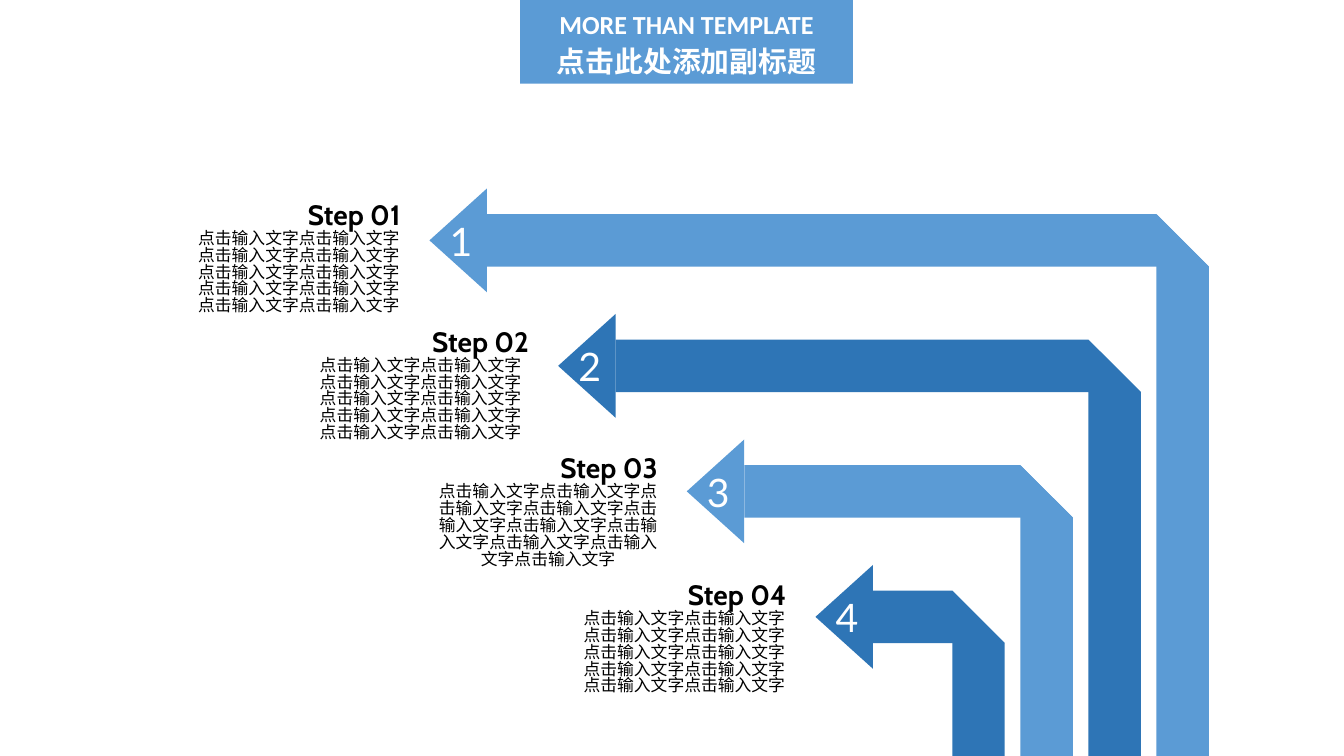
"""Build a slide with four bent arrows that lead to numbered steps."""
from dataclasses import dataclass

import lxml.etree
import pptx
import pptx.dml.color
import pptx.enum.shapes
import pptx.enum.text
import pptx.oxml.ns
import pptx.util

ALIGN = pptx.enum.text.PP_ALIGN
ANCHOR = pptx.enum.text.MSO_ANCHOR


@dataclass(frozen=True)
class Theme:
    """Colours, fonts and type sizes of the slide."""
    light: str = "5B9BD5"
    dark: str = "2E75B6"
    white: str = "FFFFFF"
    black: str = "000000"
    banner_font: str = "Calibri"
    number_font: str = "Lato"
    heading_font: str = "Cabin"
    chinese_font: str = "Noto Sans CJK SC"
    banner_size: float = 18.6
    subtitle_size: float = 20.6
    number_size: float = 28
    heading_size: float = 20
    body_size: float = 12


@dataclass(frozen=True)
class Box:
    """A rectangle in inches."""
    left: float
    top: float
    width: float
    height: float

    @property
    def right(self):
        """Return the right edge."""
        return self.left + self.width

    @property
    def bottom(self):
        """Return the bottom edge."""
        return self.top + self.height

    def lengths(self):
        """Return left, top, width and height as slide lengths."""
        return [pptx.util.Inches(value) for value in
                (self.left, self.top, self.width, self.height)]


THEME = Theme()
PAGE = Box(0, 0, 13.33, 7.5)
STEP_COUNT = 4
ARROW_LEFT, ARROW_TOP, ARROW_RIGHT = 4.26, 1.87, 11.99
COLUMN, ROW, INSET = 1.276, 1.245, 0.675
BAND, HEAD_WIDTH, HEAD_HEIGHT = 0.52, 0.57, 1.03
TEXT_GAP, TEXT_TOP, TEXT_ROW, TEXT_HEIGHT = 0.19, 1.91, 1.257, 1.28
TEXT_WIDTHS = (2.21, 2.35, 2.37, 2.22)
BODY = "点击输入文字" * 10


def paint(shape, color):
    """Fill a shape with one colour and remove its line and shadow."""
    shape.shadow.inherit = False
    shape.fill.solid()
    shape.fill.fore_color.rgb = pptx.dml.color.RGBColor.from_string(color)
    shape.line.fill.background()


def add_polygon(slide, points, color):
    """Add a closed outline through points given in inches."""
    corners = [(pptx.util.Inches(x), pptx.util.Inches(y)) for x, y in points]
    builder = slide.shapes.build_freeform(*corners[0])
    builder.add_line_segments(corners[1:], close=True)
    shape = builder.convert_to_shape()
    paint(shape, color)
    return shape


def add_span(para, text, font, size, color, bold=False):
    """Add one run with its font, size and colour."""
    span = para.add_run()
    span.text = text
    span.font.size = pptx.util.Pt(size)
    span.font.bold = bold
    span.font.color.rgb = pptx.dml.color.RGBColor.from_string(color)
    span.font.name = font
    east_asian = lxml.etree.SubElement(
        span.font._element, pptx.oxml.ns.qn("a:ea"))
    east_asian.set("typeface", font)


def draw_arrow(slide, box, number, color):
    """Draw a band that rises along the box, turns left and ends in a head."""
    middle = box.top + HEAD_HEIGHT / 2
    upper, lower = middle - BAND / 2, middle + BAND / 2
    bend, neck = box.right - BAND, box.left + HEAD_WIDTH
    add_polygon(slide, [(bend, upper), (bend, box.bottom),
                        (box.right, box.bottom), (box.right, lower)], color)
    add_polygon(slide, [(neck, lower), (box.right, lower),
                        (bend, upper), (neck, upper)], color)
    head = add_polygon(slide, [(box.left, middle), (neck, box.top),
                               (neck, box.top + HEAD_HEIGHT)], color)
    frame = head.text_frame
    frame.vertical_anchor = ANCHOR.MIDDLE
    frame.margin_left = pptx.util.Inches(0.2)
    frame.margin_top = frame.margin_right = frame.margin_bottom = 0
    para = frame.paragraphs[0]
    para.alignment = ALIGN.LEFT
    add_span(para, str(number), THEME.number_font, THEME.number_size, THEME.white)


def draw_step_text(slide, box, number):
    """Write the heading and the body of one step in the box."""
    frame = slide.shapes.add_textbox(*box.lengths()).text_frame
    frame.word_wrap = True
    heading = frame.paragraphs[0]
    heading.alignment = ALIGN.RIGHT
    add_span(heading, f"Step {number:02d}", THEME.heading_font,
             THEME.heading_size, THEME.black, bold=True)
    body = frame.add_paragraph()
    body.alignment = ALIGN.CENTER
    body.line_spacing = pptx.util.Pt(12)
    add_span(body, BODY, THEME.chinese_font, THEME.body_size, THEME.black)


def draw_banner(slide, box):
    """Draw the title banner with its two lines."""
    banner = slide.shapes.add_shape(
        pptx.enum.shapes.MSO_SHAPE.RECTANGLE, *box.lengths())
    paint(banner, THEME.light)
    frame = banner.text_frame
    frame.word_wrap = True
    frame.vertical_anchor = ANCHOR.MIDDLE
    lines = (("MORE THAN TEMPLATE", THEME.banner_font, THEME.banner_size),
             ("点击此处添加副标题", THEME.chinese_font, THEME.subtitle_size))
    for index, (text, font, size) in enumerate(lines):
        para = frame.add_paragraph() if index else frame.paragraphs[0]
        para.alignment = ALIGN.CENTER
        para.line_spacing = 1.1
        add_span(para, text, font, size, THEME.white, bold=True)


def draw_steps(slide, page):
    """Draw the arrows and then the step texts by their row and column."""
    for index in range(STEP_COUNT):
        left = ARROW_LEFT + index * COLUMN
        top = ARROW_TOP + index * ROW
        width = ARROW_RIGHT - index * INSET - left
        color = THEME.dark if index % 2 else THEME.light
        draw_arrow(slide, Box(left, top, width, page.bottom - top),
                   index + 1, color)
    for index, width in enumerate(TEXT_WIDTHS):
        right = ARROW_LEFT + index * COLUMN - TEXT_GAP
        draw_step_text(slide, Box(right - width, TEXT_TOP + index * TEXT_ROW,
                                  width, TEXT_HEIGHT), index + 1)


def main():
    """Build the deck and save it."""
    deck = pptx.Presentation()
    deck.slide_width = pptx.util.Inches(PAGE.width)
    deck.slide_height = pptx.util.Inches(PAGE.height)
    slide = deck.slides.add_slide(deck.slide_layouts[6])
    draw_steps(slide, PAGE)
    draw_banner(slide, Box(5.16, 0, 3.3, 0.83))
    deck.save("out.pptx")


if __name__ == "__main__":
    main()
